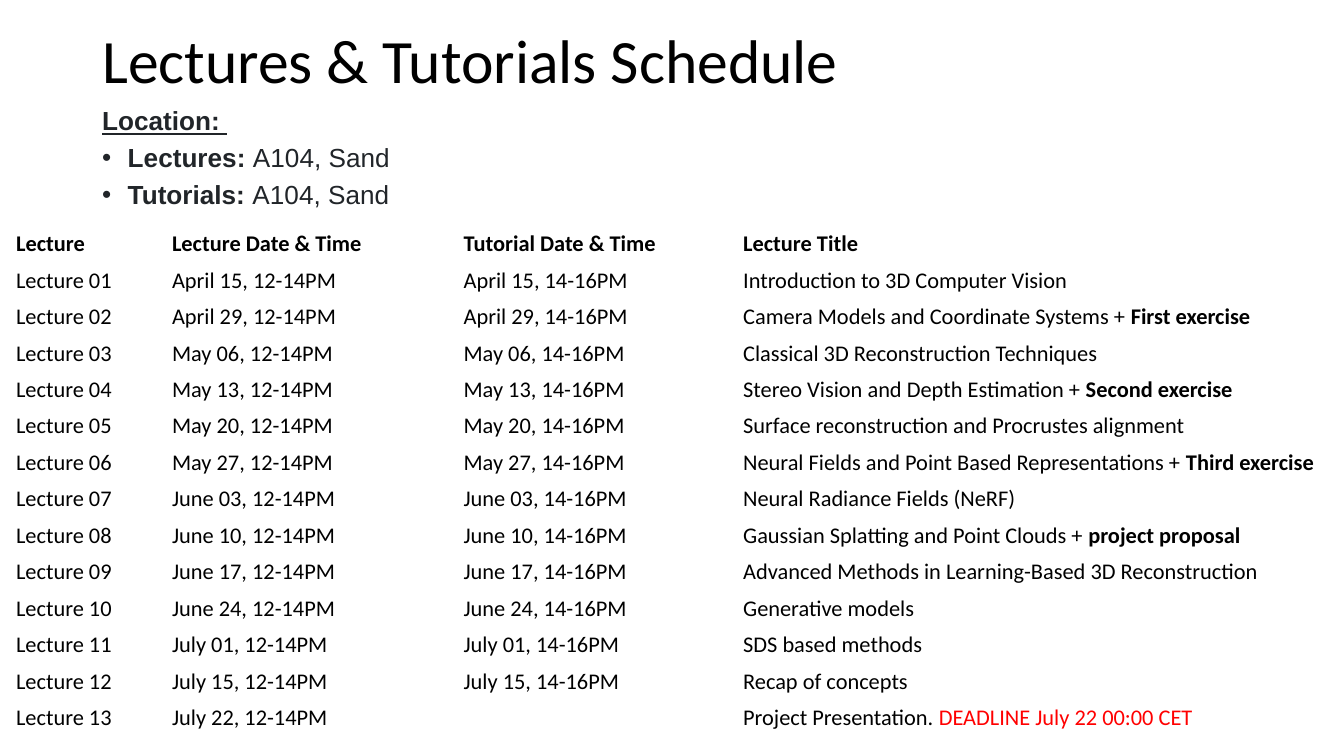
from dataclasses import dataclass

from lxml.etree import SubElement
from pptx import Presentation
from pptx.dml.color import RGBColor
from pptx.enum.text import MSO_ANCHOR, PP_ALIGN
from pptx.oxml.ns import qn
from pptx.util import Inches, Pt

BLACK = RGBColor(0, 0, 0)
CHARCOAL = RGBColor(0x21, 0x25, 0x29)
RED = RGBColor(0xFF, 0, 0)


@dataclass
class Span:
    text: str
    size: float = 12
    font: str = "Calibri"
    color: RGBColor = BLACK
    bold: bool = False
    underline: bool = False


@dataclass
class Session:
    date: str
    title: str
    extra: str = ""
    extra_color: RGBColor = BLACK
    extra_bold: bool = True
    tutorial: bool = True


HEADINGS = ["Lecture", "Lecture Date & Time", "Tutorial Date & Time", "Lecture Title"]
COLUMN_WIDTHS = [1.16, 2.17, 2.08, 4.41]
TABLE_HEIGHT = 3.8
SESSIONS = [
    Session("April 15", "Introduction to 3D Computer Vision"),
    Session("April 29", "Camera Models and Coordinate Systems + ", "First exercise"),
    Session("May 06", "Classical 3D Reconstruction Techniques"),
    Session("May 13", "Stereo Vision and Depth Estimation + ", "Second exercise"),
    Session("May 20", "Surface reconstruction and Procrustes alignment"),
    Session("May 27", "Neural Fields and Point Based Representations + ", "Third exercise"),
    Session("June 03", "Neural Radiance Fields (NeRF)"),
    Session("June 10", "Gaussian Splatting and Point Clouds + ", "project proposal"),
    Session("June 17", "Advanced Methods in Learning-Based 3D Reconstruction"),
    Session("June 24", "Generative models"),
    Session("July 01", "SDS based methods"),
    Session("July 15", "Recap of concepts"),
    Session("July 22", "Project Presentation. ", "DEADLINE July 22 00:00 CET",
            RED, extra_bold=False, tutorial=False),
]


def write_spans(para, spans: list[Span]) -> None:
    para.alignment = PP_ALIGN.LEFT
    for span in spans:
        run = para.add_run()
        run.text = span.text
        font = run.font
        font.size, font.name = Pt(span.size), span.font
        font.bold, font.underline = span.bold, span.underline
        font.color.rgb = span.color


def set_margins(holder, side: float, top: float) -> None:
    holder.margin_left = holder.margin_right = Inches(side)
    holder.margin_top = holder.margin_bottom = Inches(top)


def add_bullet(para) -> None:
    para.space_before = Pt(3)
    properties = para._p.get_or_add_pPr()
    properties.set("marL", str(Inches(0.19)))
    properties.set("indent", str(-Inches(0.19)))
    color = SubElement(properties, qn("a:buClr"))
    SubElement(color, qn("a:srgbClr"), val=str(CHARCOAL))
    SubElement(properties, qn("a:buFont"), typeface="Arial")
    SubElement(properties, qn("a:buChar"), char="•")


def location_span(text: str, bold: bool = True, underline: bool = False) -> Span:
    return Span(text, 14, "Arial", CHARCOAL, bold, underline)


def fill_cell(cell, spans: list[Span]) -> None:
    cell.fill.background()
    cell.vertical_anchor = MSO_ANCHOR.MIDDLE
    set_margins(cell, 0.03, 0.02)
    write_spans(cell.text_frame.paragraphs[0], spans)


def session_cells(number: int, session: Session) -> list[list[Span]]:
    title = [Span(session.title)]
    if session.extra:
        title.append(Span(session.extra, color=session.extra_color, bold=session.extra_bold))
    tutorial = [Span(f"{session.date}, 14-16PM")] if session.tutorial else []
    return [[Span(f"Lecture {number:02}")], [Span(f"{session.date}, 12-14PM")], tutorial, title]


# Widescreen page, 16 to 9
deck = Presentation()
deck.slide_width = Inches(10)
deck.slide_height = deck.slide_width * 9 // 16
page = deck.slides.add_slide(deck.slide_layouts[5])

# Title
title = page.shapes.title
title.left, title.top = Inches(0.69), Inches(0.09)
title.width, title.height = Inches(8.62), Inches(0.76)
title.text_frame.vertical_anchor = MSO_ANCHOR.MIDDLE
set_margins(title.text_frame, 0.07, 0.04)
title_para = title.text_frame.paragraphs[0]
title_para.line_spacing = 0.9
write_spans(title_para, [Span("Lectures & Tutorials Schedule", 33)])

# Location
box = page.shapes.add_textbox(Inches(0.69), Inches(0.74), Inches(8.62), Inches(0.57))
frame = box.text_frame
frame.word_wrap = True
set_margins(frame, 0.07, 0.04)
write_spans(frame.paragraphs[0], [location_span("Location: ", underline=True)])
for label in ("Lectures: ", "Tutorials: "):
    para = frame.add_paragraph()
    write_spans(para, [location_span(label), location_span("A104, Sand", bold=False)])
    add_bullet(para)

# Schedule table
rows = [[[Span(heading, bold=True)] for heading in HEADINGS]]
rows += [session_cells(number, session) for number, session in enumerate(SESSIONS, 1)]
table = page.shapes.add_table(
    len(rows), len(HEADINGS), Inches(0.09), Inches(1.68),
    Inches(sum(COLUMN_WIDTHS)), Inches(TABLE_HEIGHT)).table
table.first_row = table.horz_banding = False
for column, width in zip(table.columns, COLUMN_WIDTHS):
    column.width = Inches(width)
for row_index, row in enumerate(rows):
    table.rows[row_index].height = Inches(TABLE_HEIGHT / len(rows))
    for column_index, spans in enumerate(row):
        fill_cell(table.cell(row_index, column_index), spans)
    if not row[2]:
        table.cell(row_index, 1).merge(table.cell(row_index, 2))

deck.save("out.pptx")
